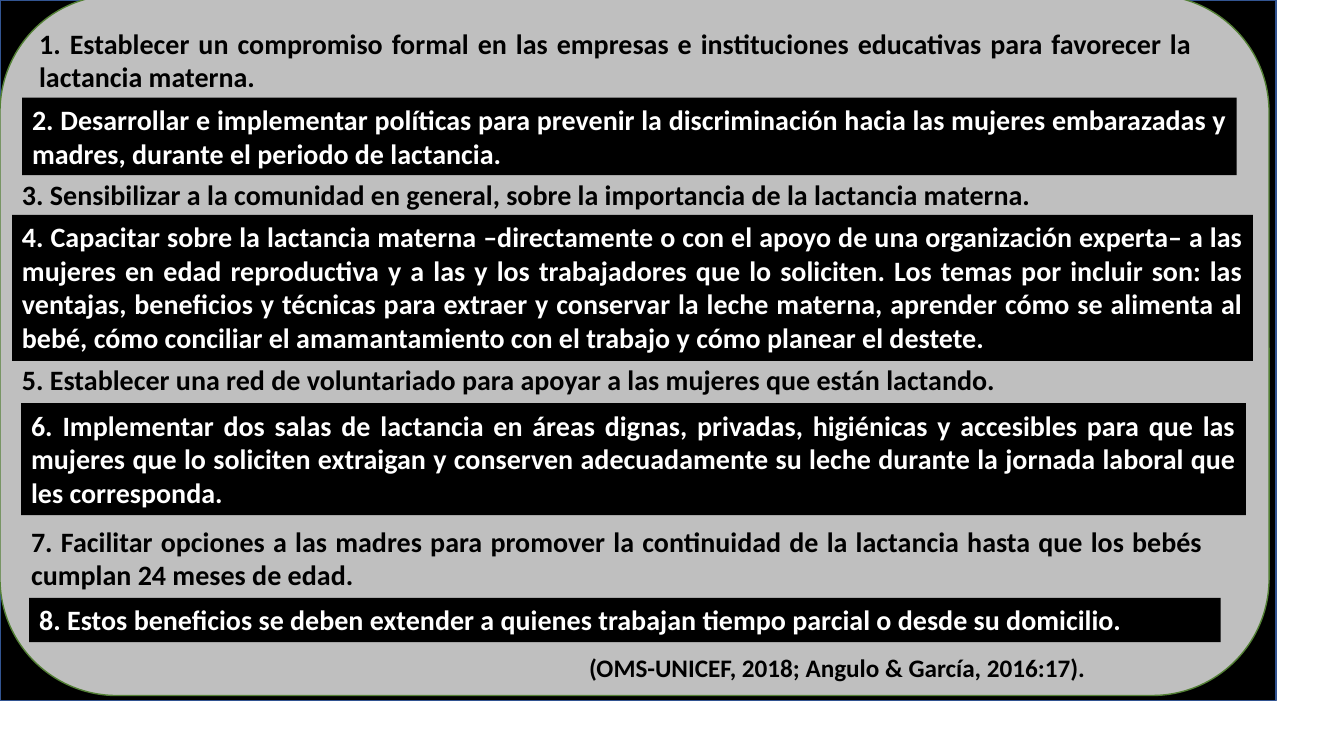
from pptx import Presentation
from pptx.dml.color import RGBColor
from pptx.enum import shapes, text
from pptx.util import Pt

BLACK = RGBColor(0x00, 0x00, 0x00)
WHITE = RGBColor(0xFF, 0xFF, 0xFF)
GRAY = RGBColor(0xBF, 0xBF, 0xBF)
BLUE = RGBColor(0x32, 0x54, 0x91)
GREEN = RGBColor(0x53, 0x80, 0x35)

MEASURES = [
    ((20.9, 15.1, 837.4, 55.4),
     "1. Establecer un compromiso formal en las empresas e instituciones educativas "
     "para favorecer la lactancia materna."),
    ((15.8, 69.8, 867.6, 55.4),
     "2. Desarrollar e implementar políticas para prevenir la discriminación hacia las "
     "mujeres embarazadas y madres, durante el periodo de lactancia."),
    ((8.6, 123.1, 886.3, 31.7),
     "3. Sensibilizar a la comunidad en general, sobre la importancia de la lactancia "
     "materna."),
    ((8.6, 153.4, 886.3, 104.4),
     "4. Capacitar sobre la lactancia materna –directamente o con el apoyo de una "
     "organización experta– a las mujeres en edad reproductiva y a las y los trabajadores "
     "que lo soliciten. Los temas por incluir son: las ventajas, beneficios y técnicas "
     "para extraer y conservar la leche materna, aprender cómo se alimenta al bebé, cómo "
     "conciliar el amamantamiento con el trabajo y cómo planear el destete."),
    ((8.6, 255.6, 834.5, 31.7),
     "5. Establecer una red de voluntariado para apoyar a las mujeres que están lactando."),
    ((15.1, 288, 874.8, 79.9),
     "6. Implementar dos salas de lactancia en áreas dignas, privadas, higiénicas y "
     "accesibles para que las mujeres que lo soliciten extraigan y conserven adecuadamente "
     "su leche durante la jornada laboral que les corresponda."),
    ((15.1, 370.8, 851, 55.4),
     "7. Facilitar opciones a las madres para promover la continuidad de la lactancia "
     "hasta que los bebés cumplan 24 meses de edad."),
    ((20.9, 427, 851, 31.7),
     "8. Estos beneficios se deben extender a quienes trabajan tiempo parcial o desde su "
     "domicilio."),
]


def add_panel(s, kind, box, fill, line=None):
    sp = s.shapes.add_shape(kind, *map(Pt, box))
    sp.shadow.inherit = False
    sp.fill.solid()
    sp.fill.fore_color.rgb = fill
    if line is None:
        sp.line.fill.background()
    else:
        sp.line.color.rgb = line
        sp.line.width = Pt(1)
    return sp


def add_background(s, box):
    left, top, width, height = box
    add_panel(s, shapes.MSO_SHAPE.RECTANGLE, box, BLACK, BLUE)
    add_panel(s, shapes.MSO_SHAPE.ROUNDED_RECTANGLE,
              (left, top - 3.6, width - 5, height), GRAY, GREEN)


def add_statement(s, box, words, size=20, highlighted=False):
    if highlighted:
        sp = add_panel(s, shapes.MSO_SHAPE.RECTANGLE, box, BLACK)
    else:
        sp = s.shapes.add_textbox(*map(Pt, box))
    tf = sp.text_frame
    tf.word_wrap = True
    tf.auto_size = text.MSO_AUTO_SIZE.SHAPE_TO_FIT_TEXT
    tf.vertical_anchor = text.MSO_ANCHOR.TOP
    p = tf.paragraphs[0]
    p.text = words
    p.alignment = text.PP_ALIGN.JUSTIFY
    p.font.name = "Calibri"
    p.font.size = Pt(size)
    p.font.bold = True
    p.font.color.rgb = WHITE if highlighted else BLACK


def build_measures_slide(prs):
    s = prs.slides.add_slide(prs.slide_layouts[6])
    add_background(s, (0, 0, 911.5, 500.4))
    for number, (box, words) in enumerate(MEASURES, start=1):
        add_statement(s, box, words, highlighted=number % 2 == 0)
    add_statement(s, (413.7, 462.6, 476.2, 29.1),
                  "(OMS-UNICEF, 2018; Angulo & García, 2016:17).", size=18)


def main():
    prs = Presentation()
    prs.slide_width, prs.slide_height = Pt(960), Pt(540)
    build_measures_slide(prs)
    prs.save("out.pptx")


if __name__ == "__main__":
    main()
